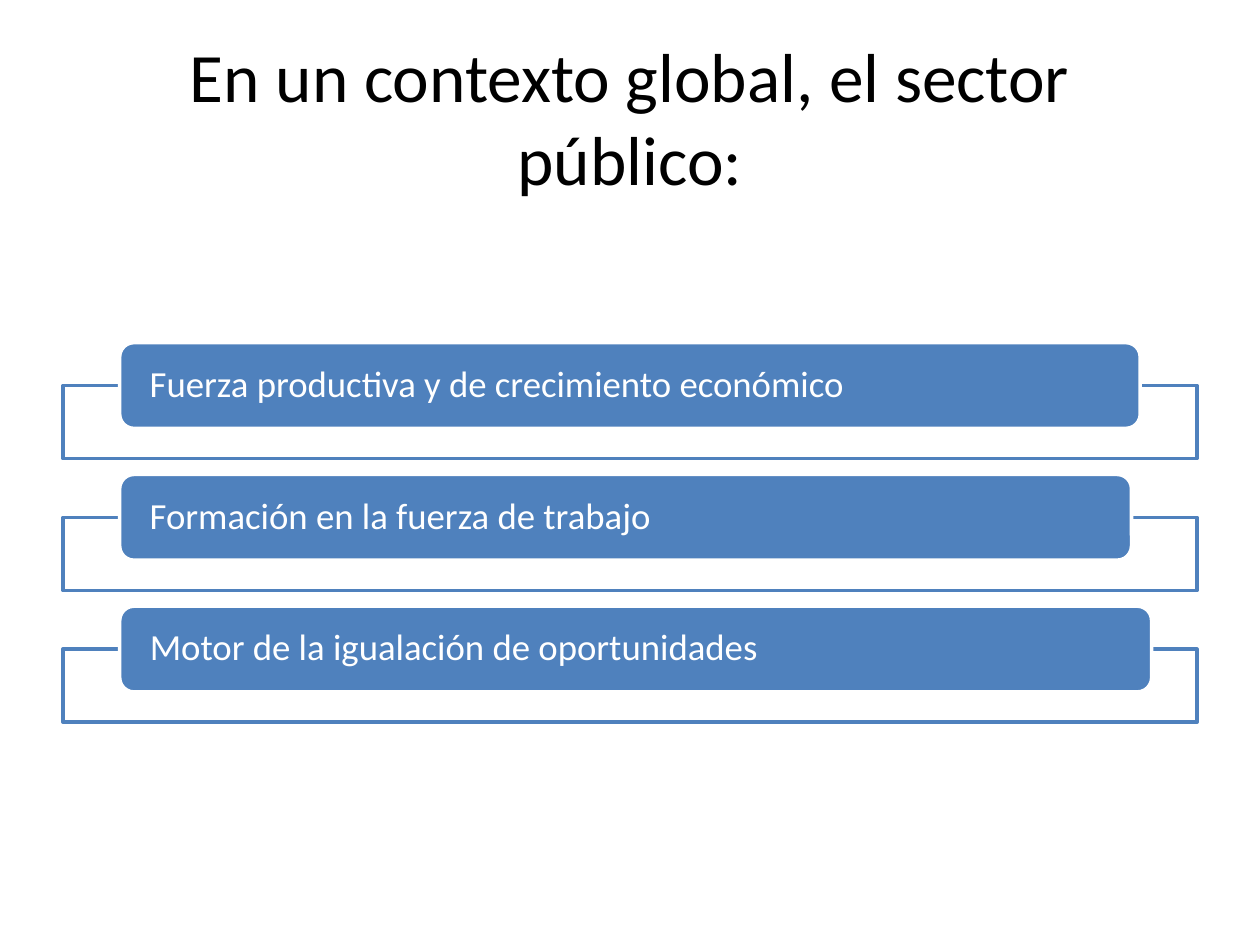
import pptx
import pptx.util
import pptx.dml.color
import pptx.enum.shapes
import pptx.enum.text
import pptx.oxml
import pptx.oxml.ns
from dataclasses import dataclass

Pt = pptx.util.Pt
Shape = pptx.enum.shapes.MSO_SHAPE
Align = pptx.enum.text.PP_ALIGN


@dataclass(frozen=True)
class Theme:
    font: str = "Calibri"
    blue: str = "4F81BD"
    white: str = "FFFFFF"
    black: str = "000000"
    head: float = 39.6
    body: float = 21


THEME = Theme()
LEFT, WIDTH = 36, 648
TOP, PITCH = 195.8, 75.3
BAR_LEFT, BAR_HIGH = 68.4, 49
DROP, BOX_HIGH = 24.5, 41.8
ROWS = [
    ("Fuerza productiva y de crecimiento económico", 583.2),
    ("Formación en la fuerza de trabajo", 578.2),
    ("Motor de la igualación de oportunidades", 589.7),
]


def paint(target, color):
    target.rgb = pptx.dml.color.RGBColor.from_string(color)


def write(frame, text, size, color, align):
    frame.word_wrap = True
    frame.auto_size = pptx.enum.text.MSO_AUTO_SIZE.NONE
    frame.vertical_anchor = pptx.enum.text.MSO_ANCHOR.MIDDLE
    para = frame.paragraphs[0]
    para.alignment = align
    run = para.add_run()
    run.text = text
    run.font.name = THEME.font
    run.font.size = Pt(size)
    paint(run.font.color, color)
    return para


def add_title(slide, text):
    title = slide.shapes.title
    title.left, title.top = Pt(LEFT), Pt(21.6)
    title.width, title.height = Pt(WIDTH), Pt(90)
    write(title.text_frame, text, THEME.head, THEME.black, Align.CENTER)


def add_block(slide, kind, place, fill, line):
    block = slide.shapes.add_shape(kind, *map(Pt, place))
    block.shadow.inherit = False
    block.fill.solid()
    paint(block.fill.fore_color, fill)
    paint(block.line.color, line)
    block.line.width = Pt(2)
    return block


def add_frame(slide, top):
    place = (LEFT, top, WIDTH, BOX_HIGH)
    box = add_block(slide, Shape.RECTANGLE, place, THEME.white, THEME.blue)
    # Slightly clear fill
    tone = box.fill._xPr.find(".//" + pptx.oxml.ns.qn("a:srgbClr"))
    tone.append(pptx.oxml.parse_xml(
        f'<a:alpha {pptx.oxml.ns.nsdecls("a")} val="90000"/>'))


def add_bar(slide, top, width, text):
    place = (BAR_LEFT, top, width, BAR_HIGH)
    bar = add_block(slide, Shape.ROUNDED_RECTANGLE, place, THEME.blue, THEME.white)
    frame = bar.text_frame
    frame.margin_left = frame.margin_right = Pt(14.8)
    frame.margin_top = frame.margin_bottom = 0
    para = write(frame, text, THEME.body, THEME.white, Align.LEFT)
    para.line_spacing = 0.9


def main():
    deck = pptx.Presentation()
    deck.slide_width, deck.slide_height = Pt(720), Pt(540)
    slide = deck.slides.add_slide(deck.slide_layouts[5])

    # Heading
    add_title(slide, "En un contexto global, el sector público:")

    # List of bars, each over its frame
    for row, (text, width) in enumerate(ROWS):
        top = TOP + row * PITCH
        add_frame(slide, top + DROP)
        add_bar(slide, top, width, text)

    deck.save("out.pptx")


if __name__ == "__main__":
    main()
